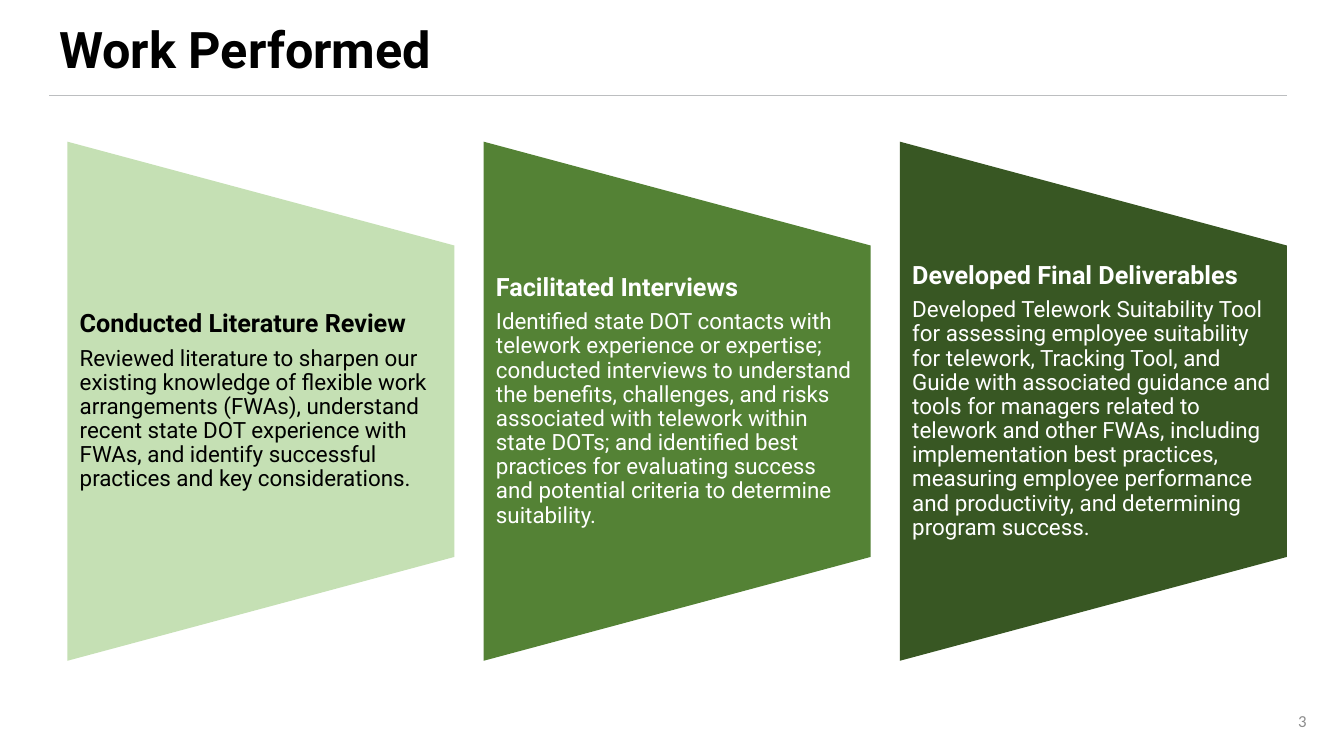
"""Build the "Work Performed" slide: three tapering panels, one per task."""
from dataclasses import dataclass

from lxml import etree
from pptx import Presentation
from pptx import util as u
from pptx.dml import color
from pptx.enum import shapes, text
from pptx.oxml import ns
from pptx.slide import Slide


@dataclass(frozen=True)
class Theme:
    """Colours, fonts and type sizes of the slide."""
    black: str = "000000"
    white: str = "FFFFFF"
    grey: str = "8C8C8C"
    rule: str = "BCBEC0"
    light_green: str = "C5E0B4"
    mid_green: str = "548235"
    dark_green: str = "385723"
    main_font: str = "Roboto"
    number_font: str = "Calibri"
    title_size: int = 36
    heading_size: int = 18
    body_size: int = 16
    number_size: int = 12


@dataclass(frozen=True)
class Area:
    """A rectangle in centimetres."""
    left: float
    top: float
    width: float
    height: float

    def lengths(self) -> tuple[u.Length, ...]:
        """Return left, top, width and height as lengths."""
        return tuple(u.Cm(side) for side in (self.left, self.top, self.width, self.height))


@dataclass(frozen=True)
class Line:
    """A paragraph of text in one style."""
    words: str
    size: int
    ink: str
    bold: bool = False
    font: str = "Roboto"


@dataclass(frozen=True)
class Task:
    """A piece of work shown on one panel."""
    heading: str
    body: str
    fill: str
    ink: str


THEME = Theme()
TASKS = [
    Task("Conducted Literature Review",
         "Reviewed literature to sharpen our existing knowledge of flexible work "
         "arrangements (FWAs), understand recent state DOT experience with FWAs, and "
         "identify successful practices and key considerations.",
         THEME.light_green, THEME.black),
    Task("Facilitated Interviews",
         "Identified state DOT contacts with telework experience or expertise; conducted "
         "interviews to understand the benefits, challenges, and risks associated with "
         "telework within state DOTs; and identified best practices for evaluating success "
         "and potential criteria to determine suitability.",
         THEME.mid_green, THEME.white),
    Task("Developed Final Deliverables",
         "Developed Telework Suitability Tool for assessing employee suitability for "
         "telework, Tracking Tool, and Guide with associated guidance and tools for managers "
         "related to telework and other FWAs, including implementation best practices, "
         "measuring employee performance and productivity, and determining program success.",
         THEME.dark_green, THEME.white),
]
PANEL_LEFT, PANEL_PITCH, PANEL_MIDDLE = 1.7, 10.49, 10.11
PANEL_WIDTH, PANEL_HEIGHT, TEXT_HEIGHT = 9.75, 13.08, 7.85
SPACE_RATIO = 0.35


def set_values(target: object, values: dict[str, object]) -> None:
    """Set each named attribute on the target."""
    for name, value in values.items():
        setattr(target, name, value)


def add_text(page: Slide, area: Area, lines: list[Line], frame_format: dict[str, object],
             para_format: dict[str, object], space_ratio: float = 0) -> None:
    """Add a text box with one paragraph per line, centred vertically."""
    frame = page.shapes.add_textbox(*area.lengths()).text_frame
    set_values(frame, {"word_wrap": True, "vertical_anchor": text.MSO_ANCHOR.MIDDLE,
                       **frame_format})
    for index, line in enumerate(lines):
        para = frame.add_paragraph() if index else frame.paragraphs[0]
        set_values(para, {"space_after": u.Pt(line.size * space_ratio), **para_format})
        span = para.add_run()
        span.text = line.words
        set_values(span.font, {"name": line.font, "size": u.Pt(line.size), "bold": line.bold})
        span.font.color.rgb = color.RGBColor.from_string(line.ink)


def add_rule(page: Slide, left: float, right: float, top: float) -> None:
    """Add the thin horizontal line below the title."""
    rule = page.shapes.add_connector(shapes.MSO_CONNECTOR.STRAIGHT,
                                     u.Cm(left), u.Cm(top), u.Cm(right), u.Cm(top))
    rule.line.width = u.Pt(0.5)
    rule.line.color.rgb = color.RGBColor.from_string(THEME.rule)
    etree.SubElement(rule._element.spPr, ns.qn("a:effectLst"))


def add_panel(page: Slide, task: Task, left: float) -> None:
    """Add a panel tapering to the right, with its heading and body."""
    outline = Area(left + (PANEL_WIDTH - PANEL_HEIGHT) / 2, PANEL_MIDDLE - PANEL_WIDTH / 2,
                   PANEL_HEIGHT, PANEL_WIDTH)
    panel = page.shapes.add_shape(shapes.MSO_SHAPE.FLOWCHART_MANUAL_OPERATION,
                                  *outline.lengths())
    panel.rotation = 270
    panel.shadow.inherit = False
    panel.fill.solid()
    panel.fill.fore_color.rgb = color.RGBColor.from_string(task.fill)
    panel.line.fill.background()
    add_text(page, Area(left, PANEL_MIDDLE - TEXT_HEIGHT / 2, PANEL_WIDTH, TEXT_HEIGHT),
             [Line(task.heading, THEME.heading_size, task.ink, bold=True),
              Line(task.body, THEME.body_size, task.ink)],
             {"margin_left": u.Cm(0.31), "margin_right": u.Cm(0.31),
              "margin_top": 0, "margin_bottom": 0},
             {"line_spacing": 0.9}, SPACE_RATIO)


def main() -> None:
    """Build and save the deck."""
    deck = Presentation()
    set_values(deck, {"slide_width": u.Cm(33.87), "slide_height": u.Cm(19.05)})
    page = deck.slides.add_slide(deck.slide_layouts[6])
    add_text(page, Area(1.24, 0.28, 29.11, 2.08),
             [Line("Work Performed", THEME.title_size, THEME.black, bold=True)],
             {}, {"line_spacing": 0.9})
    add_text(page, Area(26.47, 17.65, 6.71, 1.02),
             [Line("3", THEME.number_size, THEME.grey, font=THEME.number_font)],
             {}, {"alignment": text.PP_ALIGN.RIGHT})
    add_rule(page, 1.24, 32.44, 2.4)
    for index, task in enumerate(TASKS):
        add_panel(page, task, PANEL_LEFT + index * PANEL_PITCH)
    deck.save("out.pptx")


if __name__ == "__main__":
    main()
